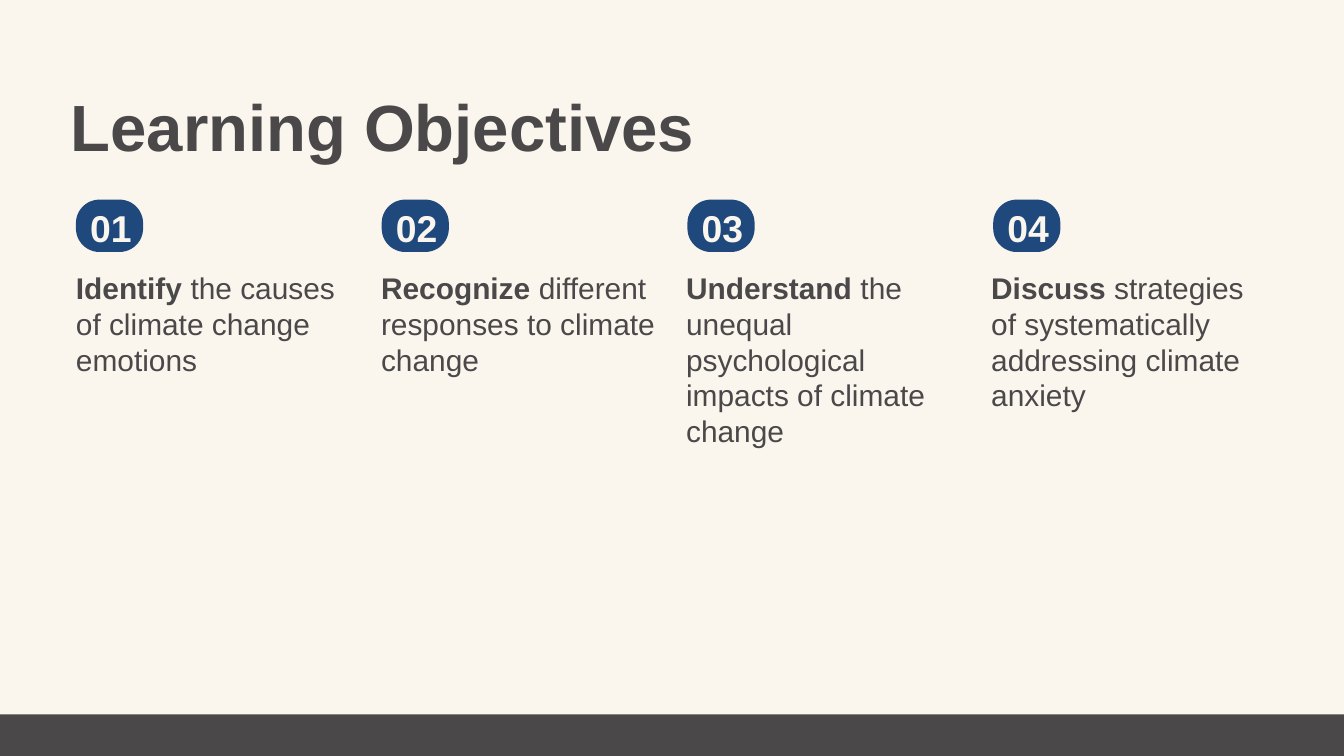
from pptx import Presentation
from pptx.dml.color import RGBColor
from pptx.enum.shapes import MSO_SHAPE
from pptx.enum.text import MSO_AUTO_SIZE
from pptx.util import Inches, Pt

WIDTH, HEIGHT = 20, 11.25
LEFT = 1.13
BADGE_STEP, TEXT_STEP = 4.55, 4.54
CREAM, CHARCOAL, NAVY = "FAF6EE", "4A4849", "1F497D"
OBJECTIVES = [
    ("Identify", " the causes of climate change emotions", 3),
    ("Recognize ", "different responses to climate change", 3),
    ("Understand", " the unequal psychological impacts of climate change", 5),
    ("Discuss", " strategies of systematically addressing climate anxiety", 4),
]


def set_fill(fill, color):
    """Apply a solid fill given as a hex string."""
    fill.solid()
    fill.fore_color.rgb = RGBColor.from_string(color)


def add_text(shapes, box, bold_text, plain_text="", *, size, color, spacing):
    """Add a text box with a bold lead and an optional plain continuation."""
    shape = shapes.add_textbox(*map(Inches, box))
    frame = shape.text_frame
    frame.word_wrap = True
    frame.auto_size = MSO_AUTO_SIZE.SHAPE_TO_FIT_TEXT
    frame.margin_left = frame.margin_right = frame.margin_top = frame.margin_bottom = 0
    paragraph = frame.paragraphs[0]
    paragraph.line_spacing = Pt(spacing)
    for text, bold in ((bold_text, True), (plain_text, False)):
        if text:
            run = paragraph.add_run()
            run.text = text
            run.font.name = "Arial"
            run.font.size = Pt(size)
            run.font.bold = bold
            run.font.color.rgb = RGBColor.from_string(color)


def add_block(shapes, kind, box, color):
    """Add a filled shape without outline or shadow."""
    shape = shapes.add_shape(kind, *map(Inches, box))
    shape.shadow.inherit = False
    set_fill(shape.fill, color)
    shape.line.fill.background()
    return shape


def add_badge(slide, column):
    """Add the numbered badge that heads a column."""
    left = LEFT + column * BADGE_STEP
    shapes = slide.shapes.add_group_shape().shapes
    badge = add_block(shapes, MSO_SHAPE.ROUNDED_RECTANGLE, (left, 2.97, 1, 0.78), NAVY)
    badge.adjustments[0] = 0.45
    add_text(shapes, (left + 0.21, 3.02, 3.39, 0.67), f"{column + 1:02}",
             size=40, color=CREAM, spacing=50)


def add_objective(slide, column, verb, rest, lines):
    """Add the objective text below the badge of a column."""
    box = (LEFT + column * TEXT_STEP, 4.01, 4.13, lines * 0.54)
    add_text(slide.shapes, box, verb, rest, size=32, color=CHARCOAL, spacing=38.4)


def main():
    """Build and save the learning objectives slide."""
    presentation = Presentation()
    presentation.slide_width, presentation.slide_height = Inches(WIDTH), Inches(HEIGHT)
    slide = presentation.slides.add_slide(presentation.slide_layouts[6])
    set_fill(slide.background.fill, CREAM)
    add_text(slide.shapes, (1.05, 1.24, 17.82, 1.18), "Learning Objectives",
             size=70, color=CHARCOAL, spacing=87.5)
    for column, objective in enumerate(OBJECTIVES):
        add_objective(slide, column, *objective)
    add_block(slide.shapes, MSO_SHAPE.RECTANGLE, (-0.38, HEIGHT - 0.62, 21.74, 0.62), CHARCOAL)
    for column in range(len(OBJECTIVES)):
        add_badge(slide, column)
    presentation.save("out.pptx")


if __name__ == "__main__":
    main()
